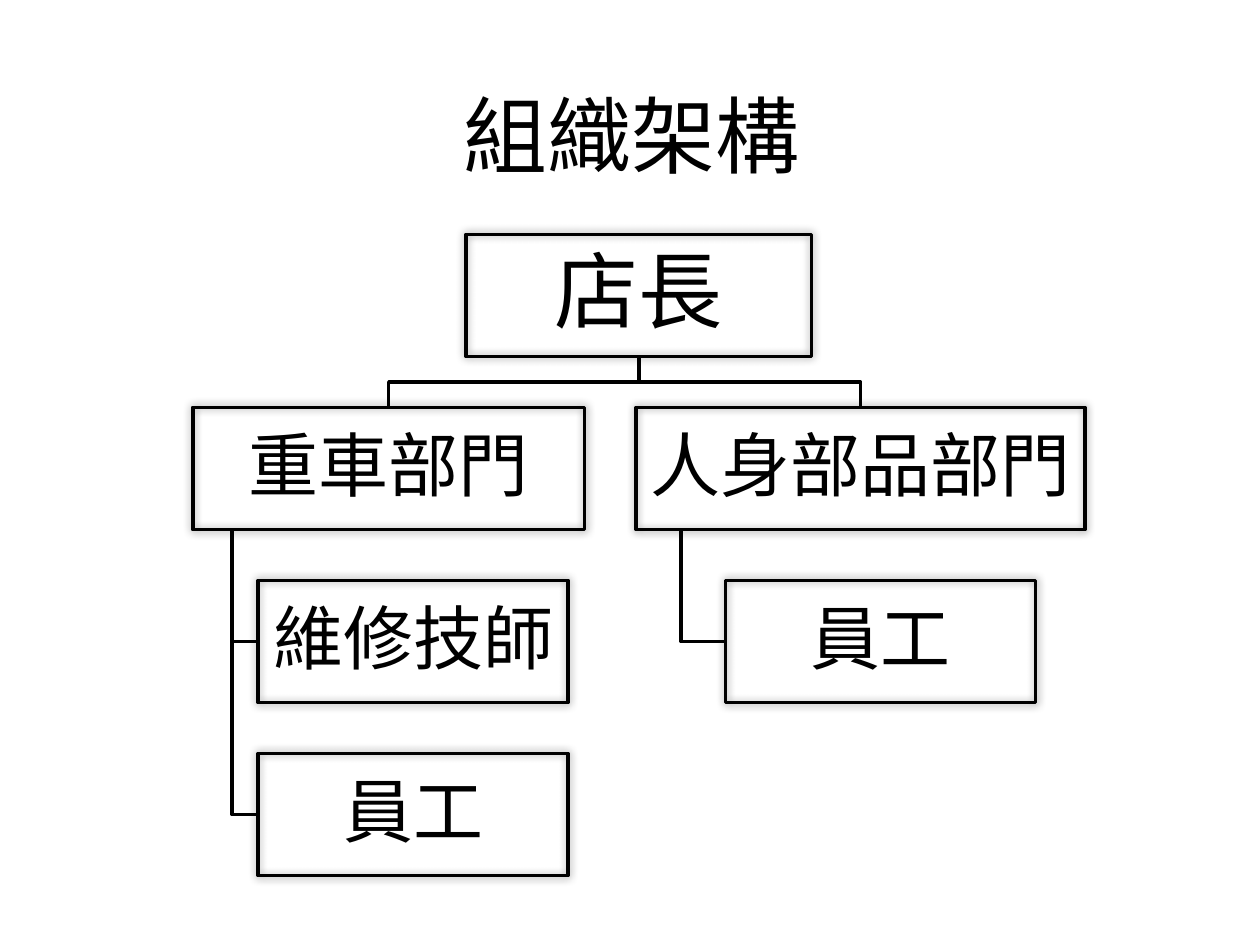
from dataclasses import dataclass

from lxml.etree import SubElement
from pptx import Presentation
from pptx.dml.color import RGBColor
from pptx.enum.shapes import MSO_SHAPE as Preset
from pptx.enum.text import MSO_ANCHOR as Anchor, PP_ALIGN as Align
from pptx.oxml.ns import qn
from pptx.util import Inches, Pt


@dataclass(frozen=True)
class Theme:
    font: str = "Noto Sans CJK SC"
    ink: RGBColor = RGBColor(0, 0, 0)
    large: int = 48
    medium: int = 40
    line: int = 2
    inset: float = 0.03


THEME = Theme()
WIDTH, HEIGHT = 10, 7.5
TOP, BOTTOM_ROW_TOP, BOX_HEIGHT = 1.86, 5.98, 0.97
ROW_PITCH = (BOTTOM_ROW_TOP - TOP) / 3
MEMBER_WIDTH = 2.46
STEM_SHARE = 0.1  # where the stem leaves a department, as a share of its width

# name, left, width, left of members, members
DEPARTMENTS = [
    ("重車部門", 1.53, 3.11, 2.05, ["維修技師", "員工"]),
    ("人身部品部門", 5.05, 3.56, 5.76, ["員工"]),
]


def row_top(row):
    return TOP + row * ROW_PITCH


def write(frame, text, size):
    frame.word_wrap = True
    frame.vertical_anchor = Anchor.MIDDLE
    paragraph = frame.paragraphs[0]
    paragraph.text = text
    paragraph.alignment = Align.CENTER
    font = paragraph.font
    font.size = Pt(size)
    font.name = THEME.font
    font.color.rgb = THEME.ink
    defaults = paragraph._p.pPr.find(qn("a:defRPr"))
    SubElement(defaults, qn("a:ea"), typeface=THEME.font)


def add_title(slide, text):
    title = slide.shapes.add_textbox(
        Inches(0.51), Inches(0.44), Inches(0.9 * WIDTH), Inches(HEIGHT / 6))
    write(title.text_frame, text, THEME.large)


def draw_outline(shape):
    shape.fill.background()
    shape.line.color.rgb = THEME.ink
    shape.line.width = Pt(THEME.line)
    shape.shadow.inherit = False


def add_glow(shape):
    """Give the shape a soft, centred shadow."""
    effects = shape._element.spPr.find(qn("a:effectLst"))
    shadow = SubElement(effects, qn("a:outerShdw"),
                        blurRad=str(Pt(5)), dist="0", dir="0", rotWithShape="0")
    color = SubElement(shadow, qn("a:srgbClr"), val=str(THEME.ink))
    SubElement(color, qn("a:alpha"), val="40000")


def add_box(slide, text, left, row, width, size=THEME.medium):
    """Add a glowing outline, and its label apart so that the text has no glow."""
    area = [Inches(n) for n in (left, row_top(row), width, BOX_HEIGHT)]
    outline = slide.shapes.add_shape(Preset.RECTANGLE, *area)
    draw_outline(outline)
    add_glow(outline)
    frame = slide.shapes.add_textbox(*area).text_frame
    frame.margin_left = frame.margin_right = Inches(THEME.inset)
    frame.margin_top = frame.margin_bottom = Inches(THEME.inset)
    write(frame, text, size)
    frame.paragraphs[0].line_spacing = 0.9


def add_branch(slide, *points):
    """Draw an open bent line through the points."""
    start, *rest = [(Inches(x), Inches(y)) for x, y in points]
    builder = slide.shapes.build_freeform(*start)
    builder.add_line_segments(rest, close=False)
    draw_outline(builder.convert_to_shape())


def add_department(slide, name, left, width, member_left, members, head_x):
    middle, stem = left + width / 2, left + STEM_SHARE * width
    head_bottom, top = row_top(0) + BOX_HEIGHT, row_top(1)
    bend = (head_bottom + top) / 2
    add_branch(slide, (head_x, head_bottom), (head_x, bend),
               (middle, bend), (middle, top))
    for row, member in enumerate(members, start=2):
        member_middle = row_top(row) + BOX_HEIGHT / 2
        add_branch(slide, (stem, top + BOX_HEIGHT), (stem, member_middle),
                   (member_left, member_middle))
        add_box(slide, member, member_left, row, MEMBER_WIDTH)
    add_box(slide, name, left, 1, width)


def main():
    deck = Presentation()
    deck.slide_width, deck.slide_height = Inches(WIDTH), Inches(HEIGHT)
    slide = deck.slides.add_slide(deck.slide_layouts[6])
    add_title(slide, "組織架構")
    head_left, head_width = 3.7, 2.74
    for department in DEPARTMENTS:
        add_department(slide, *department, head_x=head_left + head_width / 2)
    add_box(slide, "店長", head_left, 0, head_width, THEME.large)
    deck.save("out.pptx")


if __name__ == "__main__":
    main()
